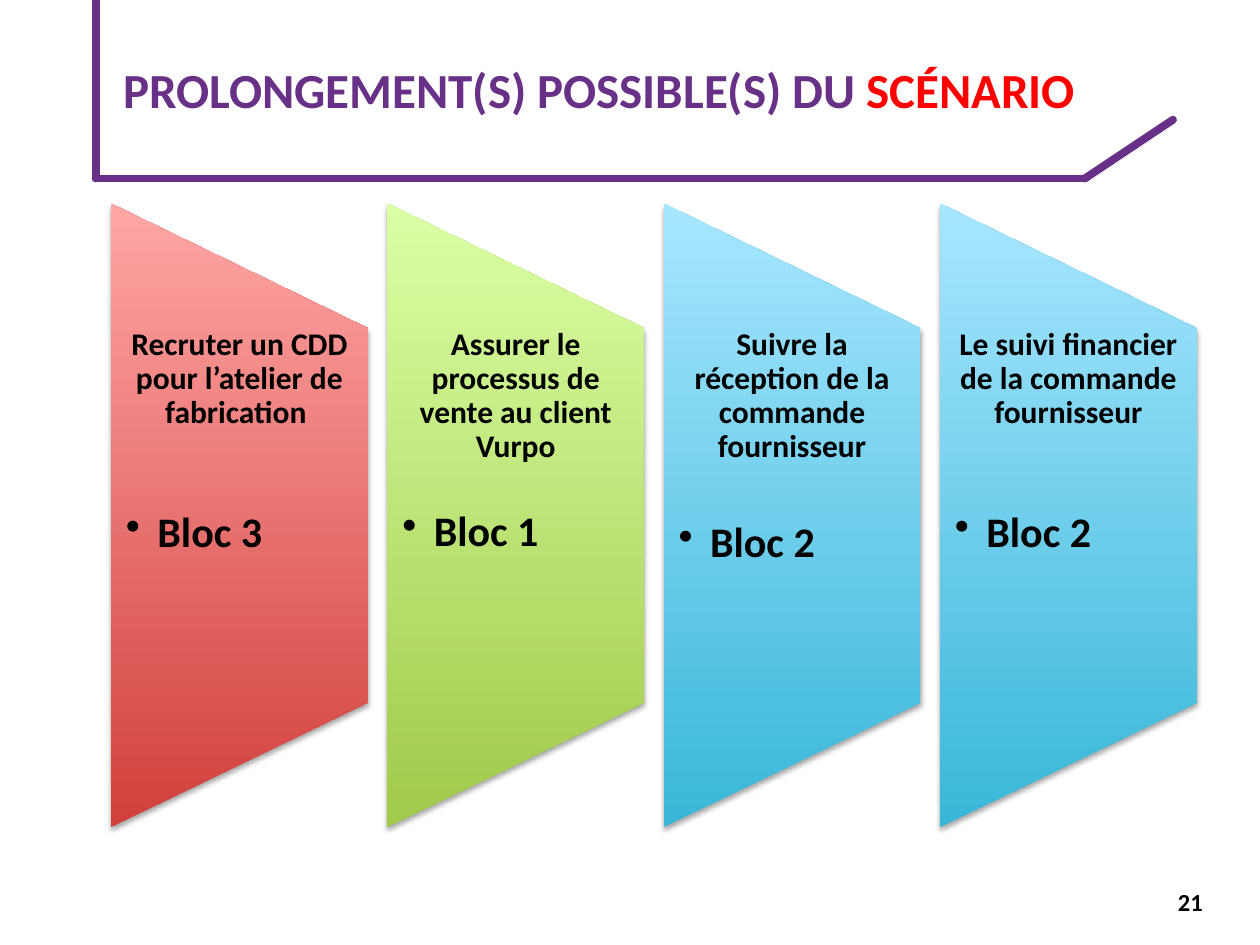
"""Build the slide on possible follow-ups of the scenario."""
from lxml import etree
from pptx import Presentation
from pptx.dml.color import RGBColor
from pptx.enum import shapes, text
from pptx.oxml import ns
from pptx.util import Pt

FONT, PURPLE, RED, BLACK = "Calibri", "683086", "FF0000", "000000"
TITLE = [("PROLONGEMENT(S) POSSIBLE(S) DU ", PURPLE), ("SCÉNARIO", RED)]
BLUE = ("39B7D8", "A7E6FF")
PANELS = [
    ("Recruter un CDD pour l’atelier de fabrication ", "Bloc 3", ("D1403C", "FFA6A5"), 46.2),
    ("Assurer le processus de vente au client Vurpo", "Bloc 1", ("A0CA4A", "DAFFA5"), 26.3),
    ("Suivre la réception de la commande fournisseur", "Bloc 2", BLUE, 32.4),
    ("Le suivi financier de la commande fournisseur", "Bloc 2", BLUE, 46.2),
]
FRAME = [(54.7, 0), (54.7, 102), (619.9, 102), (670.3, 68.4)]
LEFT, PITCH, WIDTH = 63.4, 157.9, 146.9
TOP, HEIGHT = 116.3, 356.4
TEXT_TOP, TEXT_HEIGHT = 187.5, 213.8


def rgb(value):
    return RGBColor.from_string(value)


def style(r, size, color=BLACK):
    r.font.name, r.font.size, r.font.bold = FONT, Pt(size), True
    r.font.color.rgb = rgb(color)


def child(parent, tag, **attrs):
    return etree.SubElement(parent, ns.qn(tag), attrs)


def add_box(s, left, top, width, height):
    tf = s.shapes.add_textbox(Pt(left), Pt(top), Pt(width), Pt(height)).text_frame
    tf.word_wrap = True
    return tf


def add_frame(s):
    for start, end in zip(FRAME, FRAME[1:]):
        line = s.shapes.add_connector(
            shapes.MSO_CONNECTOR.STRAIGHT, *(Pt(v) for v in start + end))
        line.line.color.rgb, line.line.width = rgb(PURPLE), Pt(4.5)
        spPr = line._element.spPr
        spPr.find(ns.qn("a:ln")).set("cap", "rnd")
        child(spPr, "a:effectLst")


def add_panel(s, left, colors):
    sp = s.shapes.add_shape(
        shapes.MSO_SHAPE.FLOWCHART_MANUAL_OPERATION,
        Pt(left + (WIDTH - HEIGHT) / 2), Pt(TOP + (HEIGHT - WIDTH) / 2),
        Pt(HEIGHT), Pt(WIDTH))
    sp.rotation = 270
    sp.line.fill.background()
    sp.fill.gradient()
    sp.fill.gradient_angle = 90
    for stop, color in zip(sp.fill.gradient_stops, colors):
        stop.color.rgb = rgb(color)
    sp.shadow.inherit = False
    spPr = sp._element.spPr
    spPr.find(ns.qn("a:gradFill")).set("rotWithShape", "0")
    shadow = child(spPr.find(ns.qn("a:effectLst")), "a:outerShdw",
                   blurRad=str(Pt(3.1)), dist=str(Pt(1.8)), dir="5400000", rotWithShape="0")
    child(child(shadow, "a:srgbClr", val=BLACK), "a:alpha", val="35000")


def add_panel_text(s, left, heading, block, gap):
    tf = add_box(s, left, TEXT_TOP, WIDTH, TEXT_HEIGHT)
    tf.margin_left = tf.margin_right = Pt(8.6)
    tf.margin_top = tf.margin_bottom = 0
    tf.text = f"{heading}\n{block}"
    for p, size in zip(tf.paragraphs, (18, 24)):
        p.line_spacing = 0.9
        style(p.runs[0], size)
    title, bullet = tf.paragraphs
    title.alignment = text.PP_ALIGN.CENTER
    bullet.space_before = Pt(gap)
    pPr = bullet._p.get_or_add_pPr()
    pPr.set("marL", str(Pt(18)))
    pPr.set("indent", str(Pt(-18)))
    child(pPr, "a:buChar", char="•")
    bullet.font.size = Pt(24)


def main():
    prs = Presentation()
    prs.slide_width, prs.slide_height = Pt(720), Pt(540)
    s = prs.slides.add_slide(prs.slide_layouts[6])
    add_frame(s)

    tf = add_box(s, LEFT, 0, 620.6, 101.5)
    tf.vertical_anchor = text.MSO_ANCHOR.MIDDLE
    for words, color in TITLE:
        r = tf.paragraphs[0].add_run()
        r.text = words
        style(r, 28, color)

    for i, (heading, block, colors, gap) in enumerate(PANELS):
        left = LEFT + i * PITCH
        add_panel(s, left, colors)
        add_panel_text(s, left, heading, block, gap)

    tf = add_box(s, 666, 503.3, 48.2, 28.8)
    tf.text = "21"
    style(tf.paragraphs[0].runs[0], 14)
    prs.save("out.pptx")


if __name__ == "__main__":
    main()
